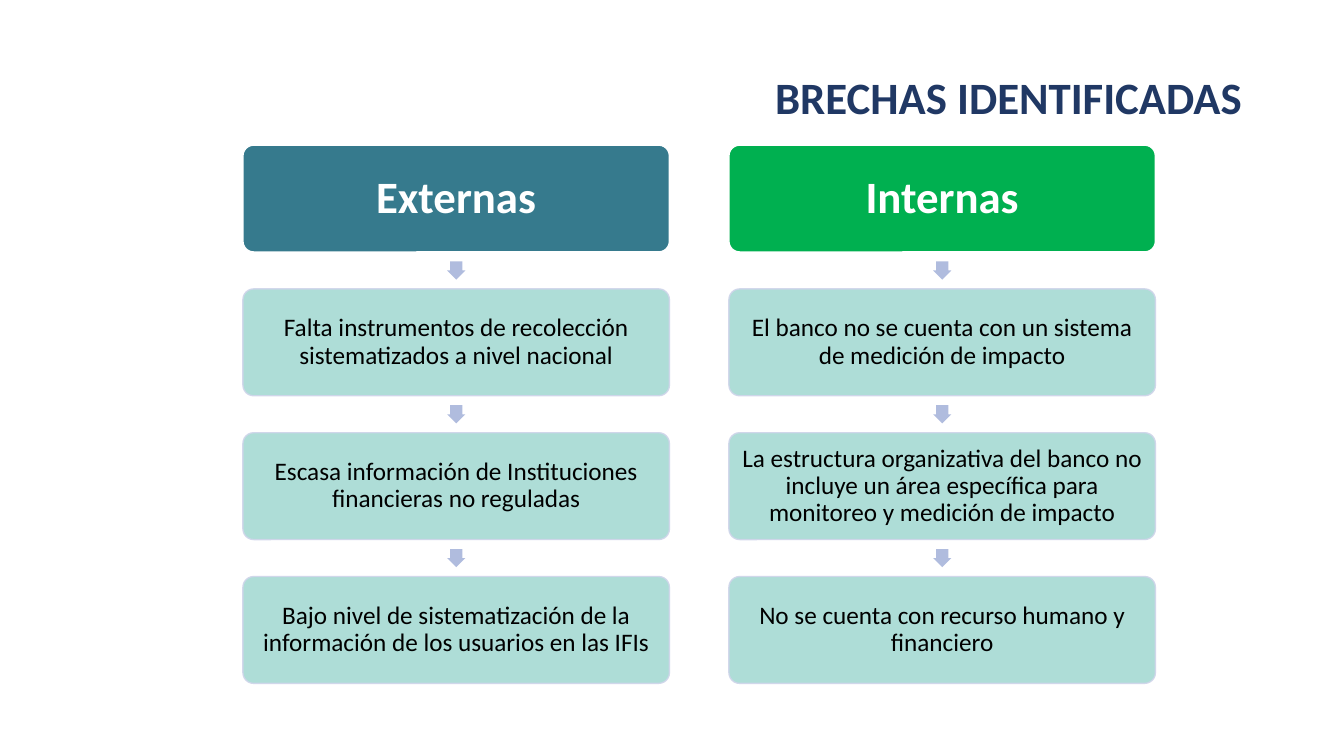
from dataclasses import dataclass

from lxml.etree import SubElement
from pptx import Presentation
from pptx.dml.color import RGBColor
from pptx.enum.shapes import MSO_SHAPE
from pptx.enum.text import MSO_ANCHOR, PP_ALIGN
from pptx.oxml.ns import qn
from pptx.util import Inches, Pt


@dataclass(frozen=True)
class Theme:
    font: str = "Calibri"
    heading_size: int = 32
    body_size: int = 18
    title: str = "203864"
    white: str = "FFFFFF"
    black: str = "000000"
    external: str = "367A8D"
    internal: str = "00B050"
    gap_fill: str = "A6DAD3"
    gap_line: str = "CFD5EA"
    arrow: str = "B0BCDE"
    gap_opacity: int = 90


THEME = Theme()
TITLE = "BRECHAS IDENTIFICADAS"
COLUMNS = [
    ("Externas", THEME.external, [
        "Falta instrumentos de recolección sistematizados a nivel nacional",
        "Escasa información de Instituciones financieras no reguladas",
        "Bajo nivel de sistematización de la información de los usuarios en las IFIs",
    ]),
    ("Internas", THEME.internal, [
        "El banco no se cuenta con un sistema de medición de impacto",
        "La estructura organizativa del banco no incluye un área específica "
        "para monitoreo y medición de impacto",
        "No se cuenta con recurso humano y financiero",
    ]),
]

COLUMN_LEFT, COLUMN_PITCH = 2.41, 4.82
FIRST_TOP, LAST_TOP = 1.44, 5.72
ROW_PITCH = (LAST_TOP - FIRST_TOP) / 3
BOX_WIDTH, BOX_HEIGHT = 4.23, 1.06
ARROW_SIZE = 0.18


def write_text(shape, text, size, color, bold, alignment, margin):
    frame = shape.text_frame
    frame_format = {
        "word_wrap": True, "vertical_anchor": MSO_ANCHOR.MIDDLE,
        "margin_left": margin, "margin_right": margin,
        "margin_top": Inches(0.05), "margin_bottom": Inches(0.05),
    }
    for name, value in frame_format.items():
        setattr(frame, name, value)
    paragraph = frame.paragraphs[0]
    paragraph.text = text
    paragraph.alignment = alignment
    paragraph.line_spacing = 0.9
    font_format = {"name": THEME.font, "size": Pt(size), "bold": bold}
    for name, value in font_format.items():
        setattr(paragraph.font, name, value)
    paragraph.font.color.rgb = RGBColor.from_string(color)


def set_opacity(shape, percent):
    """Apply the opacity to both the fill and the outline."""
    for color in shape._element.spPr.iter(qn("a:srgbClr")):
        SubElement(color, qn("a:alpha"), val=str(percent * 1000))


def add_title(slide):
    box = slide.shapes.add_textbox(Inches(0.92), Inches(0.67), Inches(11.5), Inches(0.64))
    write_text(box, TITLE, THEME.heading_size, THEME.title, True, PP_ALIGN.RIGHT, Inches(0.1))


def add_box(slide, left, top, fill, line):
    box = slide.shapes.add_shape(MSO_SHAPE.ROUNDED_RECTANGLE, Inches(left), Inches(top),
                                 Inches(BOX_WIDTH), Inches(BOX_HEIGHT))
    box.adjustments[0] = 0.1
    box.shadow.inherit = False
    box.fill.solid()
    box.fill.fore_color.rgb = RGBColor.from_string(fill)
    box.line.color.rgb = RGBColor.from_string(line)
    box.line.width = Pt(1)
    return box


def add_header(slide, left, text, fill):
    box = add_box(slide, left, FIRST_TOP, fill, THEME.white)
    write_text(box, text, THEME.heading_size, THEME.white, True, PP_ALIGN.CENTER, Inches(0.07))


def add_gap(slide, left, top, text):
    box = add_box(slide, left, top, THEME.gap_fill, THEME.gap_line)
    set_opacity(box, THEME.gap_opacity)
    write_text(box, text, THEME.body_size, THEME.black, False, PP_ALIGN.CENTER, Inches(0.06))


def add_arrow_above(slide, left, top):
    """Centre a downward arrow in the space above the box at left, top."""
    arrow_left = left + (BOX_WIDTH - ARROW_SIZE) / 2
    arrow_top = top - (ROW_PITCH - BOX_HEIGHT + ARROW_SIZE) / 2
    arrow = slide.shapes.add_shape(MSO_SHAPE.RIGHT_ARROW, Inches(arrow_left), Inches(arrow_top),
                                   Inches(ARROW_SIZE), Inches(ARROW_SIZE))
    arrow.rotation = 90
    arrow.adjustments[0] = 0.67
    arrow.shadow.inherit = False
    arrow.fill.solid()
    arrow.fill.fore_color.rgb = RGBColor.from_string(THEME.arrow)
    arrow.line.fill.background()


def add_column(slide, left, header, fill, gaps):
    add_header(slide, left, header, fill)
    for row, text in enumerate(gaps, start=1):
        top = FIRST_TOP + row * ROW_PITCH
        add_arrow_above(slide, left, top)
        add_gap(slide, left, top, text)


def main():
    presentation = Presentation()
    presentation.slide_width = Inches(13.33)
    presentation.slide_height = Inches(7.5)
    slide = presentation.slides.add_slide(presentation.slide_layouts[6])
    add_title(slide)
    for index, (header, fill, gaps) in enumerate(COLUMNS):
        add_column(slide, COLUMN_LEFT + index * COLUMN_PITCH, header, fill, gaps)
    presentation.save("out.pptx")


if __name__ == "__main__":
    main()
